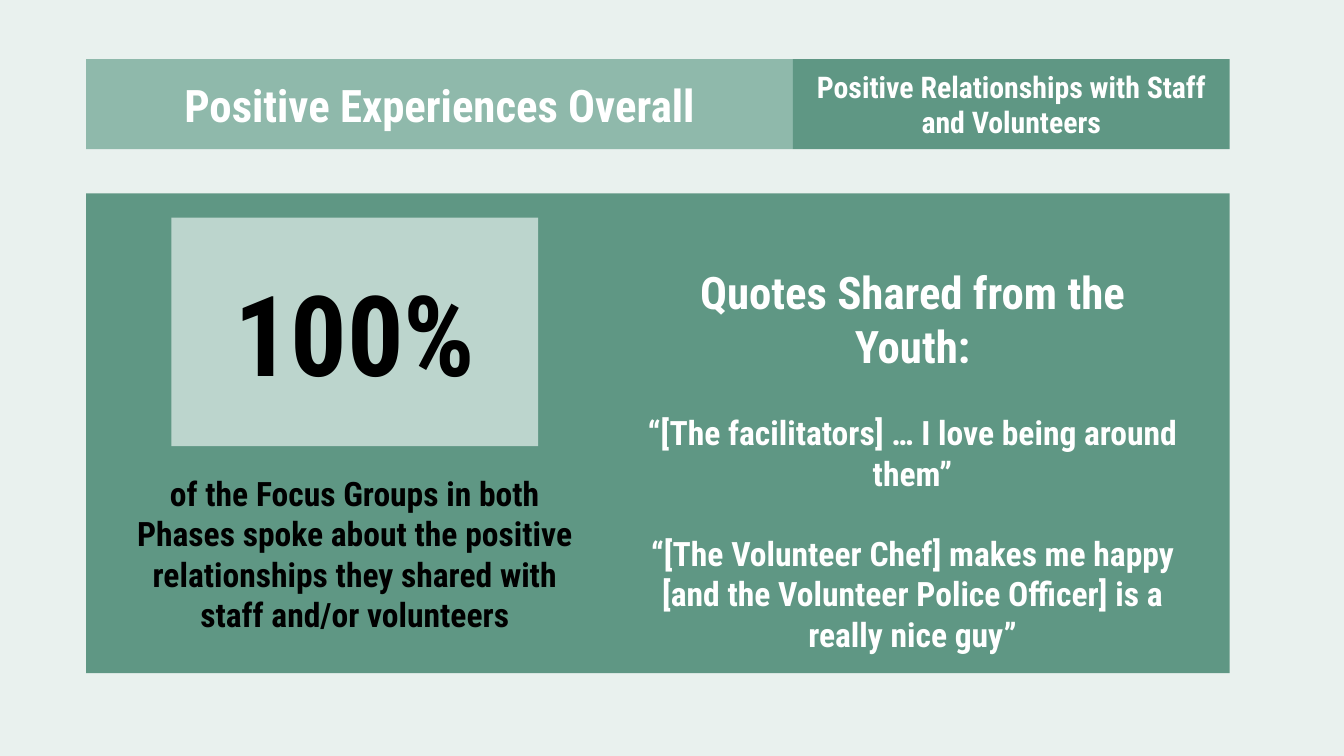
from dataclasses import dataclass

from pptx import Presentation
from pptx.dml.color import RGBColor
from pptx.enum.shapes import MSO_SHAPE
from pptx.enum.text import MSO_ANCHOR, MSO_AUTO_SIZE, PP_ALIGN
from pptx.util import Inches, Pt


@dataclass(frozen=True)
class Theme:
    font: str = "Roboto Condensed"
    background: str = "E9F1EE"
    light: str = "BCD5CD"
    medium: str = "8FB9AB"
    dark: str = "5F9784"
    white: str = "FFFFFF"
    black: str = "000000"
    figure: int = 60
    heading: int = 24
    body: int = 18
    label: int = 16
    quote_gap: float = 21.5


THEME = Theme()

TITLE = "Positive Experiences Overall"
TOPIC = "Positive Relationships with Staff and Volunteers"
FIGURE = "100%"
CAPTION = (
    "of the Focus Groups in both Phases spoke about the positive "
    "relationships they shared with staff and/or volunteers"
)
QUOTES_HEADING = "Quotes Shared from the Youth:"
QUOTES = [
    "“[The facilitators] … I love being around them”",
    "“[The Volunteer Chef] makes me happy [and the Volunteer Police Officer] is a really nice guy”",
]

# Lengths in inches: one frame, split into a header row and a panel row
SLIDE_WIDTH = 10
SLIDE_HEIGHT = SLIDE_WIDTH * 9 / 16
LEFT, FRAME_WIDTH = 0.64, 8.51
HEADER_TOP, HEADER_HEIGHT, TITLE_WIDTH = 0.44, 0.67, 5.26
PANEL_TOP, PANEL_HEIGHT = 1.44, 3.57
FIGURE_WIDTH, FIGURE_HEIGHT, FIGURE_TOP = 2.73, 1.7, 1.62
CAPTION_LEFT, CAPTION_WIDTH = 0.86, 3.56
FIGURE_LEFT = CAPTION_LEFT + (CAPTION_WIDTH - FIGURE_WIDTH) / 2

BOXES = {
    "title": (LEFT, HEADER_TOP, TITLE_WIDTH, HEADER_HEIGHT),
    "topic": (LEFT + TITLE_WIDTH, HEADER_TOP, FRAME_WIDTH - TITLE_WIDTH, HEADER_HEIGHT),
    "panel": (LEFT, PANEL_TOP, FRAME_WIDTH, PANEL_HEIGHT),
    "figure": (FIGURE_LEFT, FIGURE_TOP, FIGURE_WIDTH, FIGURE_HEIGHT),
    "caption": (CAPTION_LEFT, 3.42, CAPTION_WIDTH, 1.4),
    "quotes": (4.67, 1.92, 4.24, 2.98),
}


def inches(box):
    return [Inches(length) for length in box]


def paint(fill, color):
    fill.solid()
    fill.fore_color.rgb = RGBColor.from_string(color)


def add_block(slide, box, color):
    block = slide.shapes.add_shape(MSO_SHAPE.RECTANGLE, *inches(box))
    block.shadow.inherit = False
    block.line.fill.background()
    paint(block.fill, color)
    return block


def write(shape, lines, color, anchor=MSO_ANCHOR.MIDDLE):
    """Fill a shape with centred bold lines of (text, size, space before)."""
    frame = shape.text_frame
    frame_format = {
        "word_wrap": True,
        "auto_size": MSO_AUTO_SIZE.NONE,
        "vertical_anchor": anchor,
        "margin_left": Inches(0.1),
        "margin_right": Inches(0.1),
        "margin_top": Inches(0.05),
        "margin_bottom": Inches(0.05),
    }
    for name, value in frame_format.items():
        setattr(frame, name, value)
    for index, (text, size, gap) in enumerate(lines):
        paragraph = frame.paragraphs[0] if index == 0 else frame.add_paragraph()
        paragraph.alignment = PP_ALIGN.CENTER
        paragraph.space_before = Pt(gap)
        run = paragraph.add_run()
        run.text = text
        for name, value in {"name": THEME.font, "size": Pt(size), "bold": True}.items():
            setattr(run.font, name, value)
        run.font.color.rgb = RGBColor.from_string(color)


def main():
    presentation = Presentation()
    presentation.slide_width = Inches(SLIDE_WIDTH)
    presentation.slide_height = Inches(SLIDE_HEIGHT)
    slide = presentation.slides.add_slide(presentation.slide_layouts[5])
    paint(slide.background.fill, THEME.background)

    title = slide.shapes.title
    title.left, title.top, title.width, title.height = inches(BOXES["title"])
    paint(title.fill, THEME.medium)
    write(title, [(TITLE, THEME.heading, 0)], THEME.white)

    topic = add_block(slide, BOXES["topic"], THEME.dark)
    write(topic, [(TOPIC, THEME.label, 0)], THEME.white)

    add_block(slide, BOXES["panel"], THEME.dark)
    figure = add_block(slide, BOXES["figure"], THEME.light)
    write(figure, [(FIGURE, THEME.figure, 0)], THEME.black)

    caption = slide.shapes.add_textbox(*inches(BOXES["caption"]))
    write(caption, [(CAPTION, THEME.body, 0)], THEME.black)

    quotes = slide.shapes.add_textbox(*inches(BOXES["quotes"]))
    lines = [(QUOTES_HEADING, THEME.heading, 0)]
    lines += [(quote, THEME.body, THEME.quote_gap) for quote in QUOTES]
    write(quotes, lines, THEME.white, MSO_ANCHOR.TOP)

    presentation.save("out.pptx")


if __name__ == "__main__":
    main()
